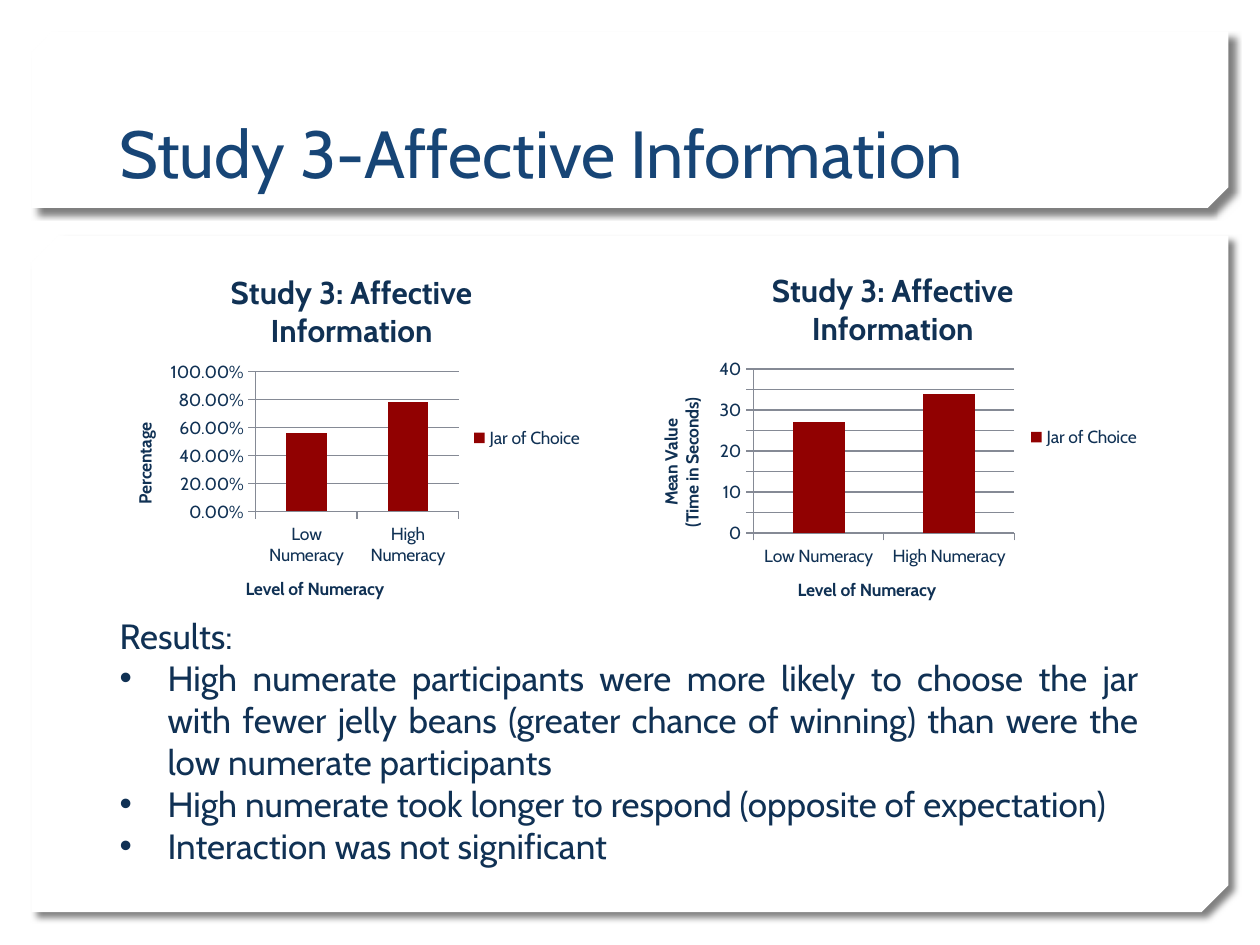
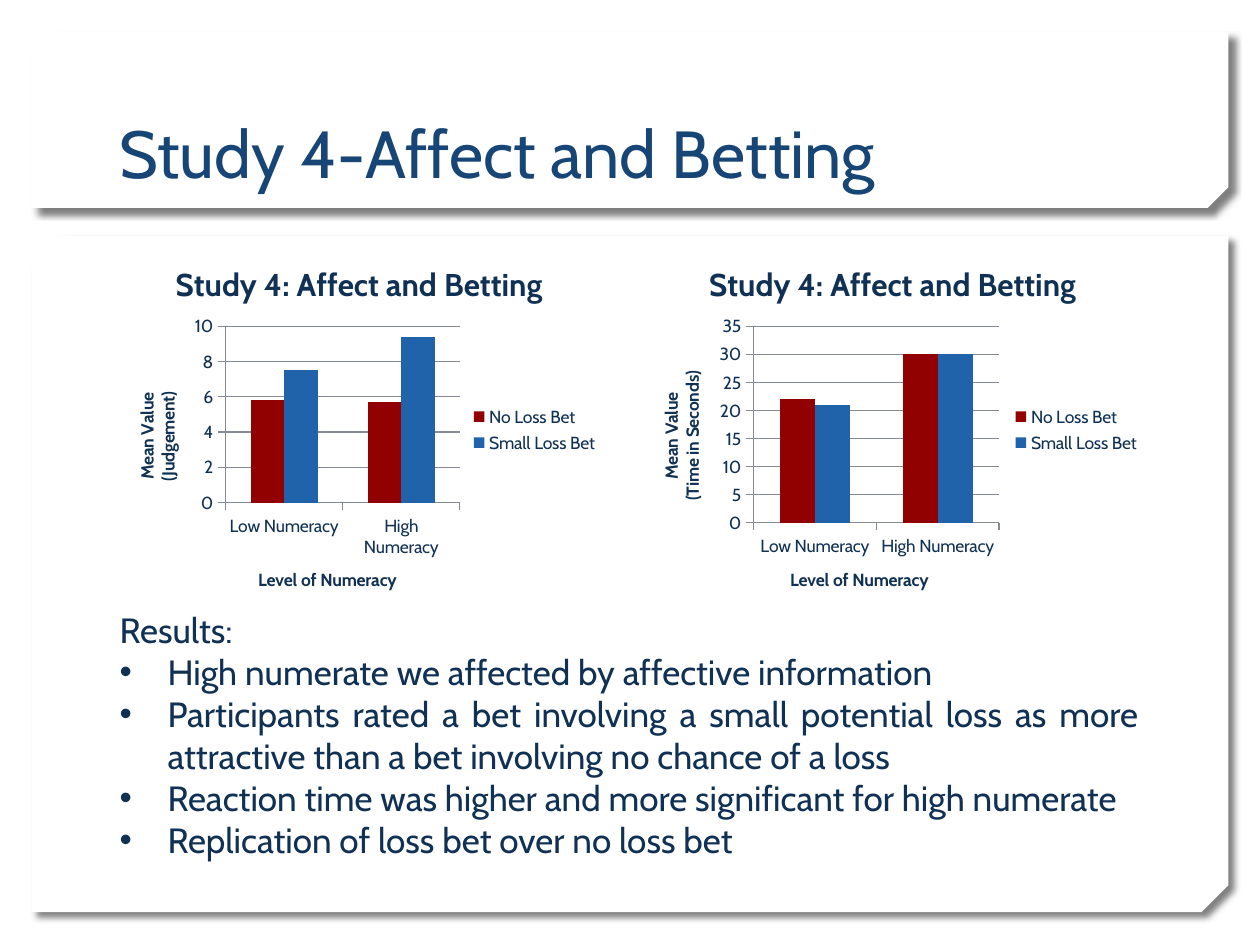
from dataclasses import dataclass
from typing import NamedTuple

from lxml import etree
from pptx import Presentation
from pptx.chart.chart import Chart
from pptx.chart.data import CategoryChartData
from pptx.dml.color import RGBColor
from pptx.enum.chart import XL_CHART_TYPE, XL_LEGEND_POSITION, XL_TICK_MARK
from pptx.enum.shapes import MSO_SHAPE
from pptx.enum.text import MSO_ANCHOR, MSO_AUTO_SIZE, PP_ALIGN
from pptx.oxml import parse_xml
from pptx.oxml.ns import nsdecls, qn
from pptx.slide import Slide, SlideLayout
from pptx.text.text import Font, TextFrame
from pptx.util import Inches, Pt

COLUMNS = XL_CHART_TYPE.COLUMN_CLUSTERED
LEGEND_RIGHT = XL_LEGEND_POSITION.RIGHT
TICK_OUTSIDE = XL_TICK_MARK.OUTSIDE
SNIPPED = MSO_SHAPE.SNIP_2_DIAG_RECTANGLE
ANCHOR_TOP, ANCHOR_BOTTOM = MSO_ANCHOR.TOP, MSO_ANCHOR.BOTTOM
NO_AUTOFIT = MSO_AUTO_SIZE.NONE
LEFT, JUSTIFIED = PP_ALIGN.LEFT, PP_ALIGN.JUSTIFY

WHITE = RGBColor(0xFF, 0xFF, 0xFF)
TITLE_BLUE = RGBColor(0x17, 0x45, 0x76)
TEXT_NAVY = RGBColor(0x10, 0x31, 0x54)
BAR_RED = RGBColor(0x91, 0x01, 0x01)
BAR_BLUE = RGBColor(0x20, 0x63, 0xAA)
GRID_GREY = RGBColor(0x85, 0x8A, 0x95)
SERIES_COLORS = (BAR_RED, BAR_BLUE)

FONT_NAME = "Cabin"
MARGIN, CONTENT_WIDTH = 0.85, 8.29
BULLET_INDENT = 0.38
CATEGORIES = ("Low Numeracy", "High Numeracy")
SHADOW_XML = (
    f'<a:effectLst {nsdecls("a")}><a:outerShdw blurRad="50800" dist="63500" '
    'dir="2700000" algn="tl" rotWithShape="0"><a:srgbClr val="000000">'
    '<a:alpha val="50000"/></a:srgbClr></a:outerShdw></a:effectLst>'
)


class Area(NamedTuple):
    """A rectangle on the slide, in inches."""
    left: float
    top: float
    width: float
    height: float


@dataclass(frozen=True)
class Panel:
    top: float
    height: float
    snip: float


@dataclass(frozen=True)
class BarChart:
    frame: Area
    plot: Area
    value_title: str
    series: dict[str, tuple[float, float]]
    maximum: float
    step: float
    number_format: str = "General"


@dataclass(frozen=True)
class Study:
    title: str
    chart_title: str
    charts: tuple[BarChart, ...]
    results_top: float
    results: tuple[str, ...]


PANELS = (Panel(1.87, 5.37, 0.04), Panel(0.25, 1.4, 0.117))

STUDIES = (
    Study(
        "Study 3-Affective Information",
        "Study 3: Affective Information",
        (
            BarChart(Area(0.85, 1.99, 3.88, 2.97), Area(2.03, 2.95, 1.61, 1.11),
                     "Percentage",
                     {"Jar of Choice": (0.56, 0.78)}, 1, 0.2, "0.00%"),
            BarChart(Area(5.02, 1.97, 4.13, 3), Area(5.98, 2.93, 2.07, 1.3),
                     "Mean Value\n(Time in Seconds)",
                     {"Jar of Choice": (27, 34)}, 40, 5),
        ),
        4.83,
        (
            "High numerate participants were more likely to choose the jar with "
            "fewer jelly beans (greater chance of winning) than were the low "
            "numerate participants",
            "High numerate took longer to respond (opposite of expectation)",
            "Interaction was not significant",
        ),
    ),
    Study(
        "Study 4-Affect and Betting",
        "Study 4: Affect and Betting",
        (
            BarChart(Area(0.85, 1.93, 4, 2.96), Area(1.79, 2.59, 1.86, 1.4),
                     "Mean Value\n(Judgement)",
                     {"No Loss Bet": (5.8, 5.7), "Small Loss Bet": (7.5, 9.4)},
                     10, 2),
            BarChart(Area(5.02, 1.93, 4.13, 2.96), Area(5.98, 2.59, 1.95, 1.56),
                     "Mean Value\n(Time in Seconds)",
                     {"No Loss Bet": (22, 30), "Small Loss Bet": (21, 30)},
                     35, 5),
        ),
        4.78,
        (
            "High numerate we affected by affective information",
            "Participants rated a bet involving a small potential loss as more "
            "attractive than a bet involving no chance of a loss",
            "Reaction time was higher and more significant for high numerate",
            "Replication of loss bet over no loss bet",
        ),
    ),
)


def style_font(font: Font, size: float, color: RGBColor, bold: bool = False) -> None:
    font.name = FONT_NAME
    font.size = Pt(size)
    font.bold = bold
    font.color.rgb = color


def style_frame(frame: TextFrame, size: float, color: RGBColor,
                bold: bool = False) -> None:
    for para in frame.paragraphs:
        for span in para.runs:
            style_font(span.font, size, color, bold)


def add_panels(slide: Slide, layout: SlideLayout) -> None:
    """Draw the snipped panels and move them behind everything on the layout."""
    for position, panel in enumerate(PANELS):
        box = slide.shapes.add_shape(SNIPPED, Inches(0.25), Inches(panel.top),
                                     Inches(9.5), Inches(panel.height))
        box.adjustments[0] = 0
        box.adjustments[1] = panel.snip
        box.fill.solid()
        box.fill.fore_color.rgb = WHITE
        box.line.fill.background()
        properties = box.element.spPr
        properties.find(qn("a:xfrm")).set("flipV", "1")
        properties.append(parse_xml(SHADOW_XML))
        layout.shapes.element.insert(2 + position, box.element)


def add_title(slide: Slide, text: str) -> None:
    title = slide.shapes.title
    title.left, title.top = Inches(MARGIN), Inches(0.32)
    title.width, title.height = Inches(CONTENT_WIDTH), Inches(1.25)
    frame = title.text_frame
    frame.text = text
    frame.auto_size = NO_AUTOFIT
    frame.vertical_anchor = ANCHOR_BOTTOM
    frame.paragraphs[0].alignment = LEFT
    style_frame(frame, 38, TITLE_BLUE)


def add_results(slide: Slide, study: Study) -> None:
    body = slide.placeholders[1]
    body.left, body.top = Inches(MARGIN), Inches(study.results_top)
    body.width, body.height = Inches(CONTENT_WIDTH), Inches(2.12)
    frame = body.text_frame
    frame.text = "\n".join(("Results:", *study.results))
    frame.auto_size = NO_AUTOFIT
    frame.vertical_anchor = ANCHOR_TOP
    for number, para in enumerate(frame.paragraphs):
        para.space_before = Pt(0)
        para.alignment = JUSTIFIED if number else LEFT
        indent = Inches(BULLET_INDENT) if number else 0
        properties = para._p.get_or_add_pPr()
        properties.set("marL", str(indent))
        properties.set("indent", str(-indent))
        if number:
            etree.SubElement(properties, qn("a:buChar")).set("char", "•")
        else:
            etree.SubElement(properties, qn("a:buNone"))
    style_frame(frame, 20, TEXT_NAVY)


def style_axes(chart: Chart, spec: BarChart) -> None:
    values, categories = chart.value_axis, chart.category_axis
    values.minimum_scale, values.maximum_scale = 0, spec.maximum
    values.major_unit = spec.step
    values.has_major_gridlines = True
    values.major_gridlines.format.line.color.rgb = GRID_GREY
    values.tick_labels.number_format = spec.number_format
    values.tick_labels.number_format_is_linked = False
    for axis, text in ((values, spec.value_title),
                       (categories, "Level of Numeracy")):
        axis.major_tick_mark = TICK_OUTSIDE
        axis.format.line.color.rgb = GRID_GREY
        axis.axis_title.text_frame.text = text
        style_frame(axis.axis_title.text_frame, 10, TEXT_NAVY, bold=True)


def place_plot(chart: Chart, frame: Area, plot: Area) -> None:
    """Fix the area inside the axes, as fractions of the chart frame."""
    plot_area = chart.element.chart.plotArea
    for automatic in plot_area.findall(qn("c:layout")):
        plot_area.remove(automatic)
    layout = etree.Element(qn("c:layout"))
    manual = etree.SubElement(layout, qn("c:manualLayout"))
    settings = {
        "layoutTarget": "inner", "xMode": "edge", "yMode": "edge",
        "x": (plot.left - frame.left) / frame.width,
        "y": (plot.top - frame.top) / frame.height,
        "w": plot.width / frame.width,
        "h": plot.height / frame.height,
    }
    for name, value in settings.items():
        etree.SubElement(manual, qn(f"c:{name}")).set("val", str(value))
    plot_area.insert(0, layout)


def add_bar_chart(slide: Slide, spec: BarChart, title: str) -> None:
    data = CategoryChartData(number_format=spec.number_format)
    data.categories = CATEGORIES
    for name, values in spec.series.items():
        data.add_series(name, values)
    chart = slide.shapes.add_chart(COLUMNS, *map(Inches, spec.frame), data).chart
    style_font(chart.font, 10, TEXT_NAVY)
    chart.has_title = True
    chart.chart_title.text_frame.text = title
    chart.chart_title.include_in_layout = False
    style_frame(chart.chart_title.text_frame, 18, TEXT_NAVY, bold=True)
    chart.has_legend = True
    chart.legend.position = LEGEND_RIGHT
    chart.legend.include_in_layout = False
    plot = chart.plots[0]
    plot.gap_width = 150
    plot.overlap = 0
    plot.vary_by_categories = False
    for series, color in zip(plot.series, SERIES_COLORS):
        series.format.fill.solid()
        series.format.fill.fore_color.rgb = color
    style_axes(chart, spec)
    place_plot(chart, spec.frame, spec.plot)


def main() -> None:
    deck = Presentation()
    deck.slide_width, deck.slide_height = Inches(10), Inches(7.5)
    layout = deck.slide_layouts[1]
    for study in STUDIES:
        page = deck.slides.add_slide(layout)
        add_title(page, study.title)
        for spec in study.charts:
            add_bar_chart(page, spec, study.chart_title)
        add_results(page, study)
    add_panels(deck.slides[0], layout)
    deck.save("out.pptx")


if __name__ == "__main__":
    main()
